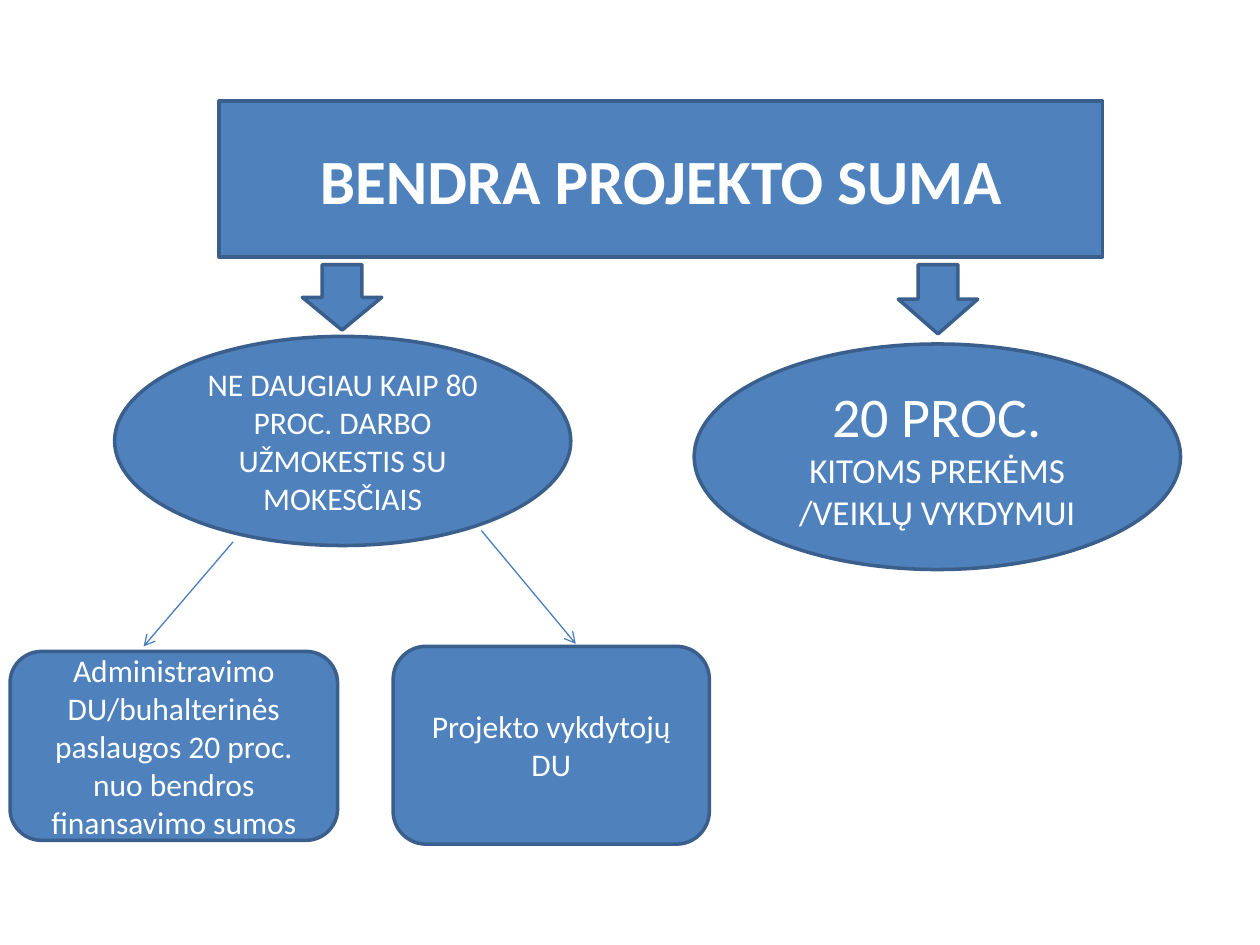
from lxml import etree
from pptx import Presentation
from pptx.dml.color import RGBColor
from pptx.enum.shapes import MSO_CONNECTOR, MSO_SHAPE
from pptx.enum.text import MSO_ANCHOR, MSO_AUTO_SIZE, PP_ALIGN
from pptx.oxml.ns import qn
from pptx.util import Inches, Pt

BLUE = RGBColor(0x4F, 0x81, 0xBD)
DARK_BLUE = RGBColor(0x3A, 0x5F, 0x8C)
ARROW_BLUE = RGBColor(0x4B, 0x7E, 0xBC)
WHITE = RGBColor(0xFF, 0xFF, 0xFF)
STRAIGHT = MSO_CONNECTOR.STRAIGHT
OVAL, ROUNDED, DOWN_ARROW = MSO_SHAPE.OVAL, MSO_SHAPE.ROUNDED_RECTANGLE, MSO_SHAPE.DOWN_ARROW
MIDDLE, CENTER, NO_AUTOFIT = MSO_ANCHOR.MIDDLE, PP_ALIGN.CENTER, MSO_AUTO_SIZE.NONE


def style_shape(shape):
    shape.fill.solid()
    shape.fill.fore_color.rgb = BLUE
    shape.line.color.rgb = DARK_BLUE
    shape.line.width = Pt(2)
    shape.shadow.inherit = False


def write_text(shape, runs, bold=False):
    frame = shape.text_frame
    frame.word_wrap = True
    frame.auto_size = NO_AUTOFIT
    frame.vertical_anchor = MIDDLE
    paragraph = frame.paragraphs[0]
    paragraph.alignment = CENTER
    paragraph.space_before = Pt(0)
    for text, size in runs:
        run = paragraph.add_run()
        run.text = text
        run.font.name = "Calibri"
        run.font.size = Pt(size)
        run.font.bold = bold
        run.font.color.rgb = WHITE


presentation = Presentation()
presentation.slide_width = Inches(10)
presentation.slide_height = Inches(7.5)
slide = presentation.slides.add_slide(presentation.slide_layouts[1])

# Title bar and the 20 percent ellipse, in the template's placeholders
title, other_costs = slide.placeholders
for placeholder, preset, (left, top, width, height) in (
    (title, "rect", (1.74, 0.8, 7.01, 1.24)),
    (other_costs, "ellipse", (5.51, 2.73, 3.86, 1.79)),
):
    placeholder.left, placeholder.top = Inches(left), Inches(top)
    placeholder.width, placeholder.height = Inches(width), Inches(height)
    geometry = etree.SubElement(placeholder.element.spPr, qn("a:prstGeom"), prst=preset)
    etree.SubElement(geometry, qn("a:avLst"))
    style_shape(placeholder)

write_text(title, [("BENDRA PROJEKTO SUMA", 36)], bold=True)
write_text(other_costs, [("20 PROC. ", 32), ("KITOMS PREKĖMS /VEIKLŲ VYKDYMUI", 20)])
properties = other_costs.text_frame.paragraphs[0]._p.get_or_add_pPr()
properties.set("marL", "0")
properties.set("indent", "0")
etree.SubElement(properties, qn("a:buNone"))

# Salary ellipse and its two parts
for preset, left, top, width, height, text in (
    (OVAL, 0.91, 2.67, 3.62, 1.66, "NE DAUGIAU KAIP 80 PROC. DARBO UŽMOKESTIS SU MOKESČIAIS"),
    (ROUNDED, 0.08, 5.17, 2.6, 1.5,
     "Administravimo DU/buhalterinės paslaugos 20 proc. nuo bendros finansavimo sumos"),
    (ROUNDED, 3.12, 5.13, 2.51, 1.57, "Projekto vykdytojų DU"),
):
    shape = slide.shapes.add_shape(preset, Inches(left), Inches(top), Inches(width), Inches(height))
    style_shape(shape)
    write_text(shape, [(text, 18)])

# Block arrows below the title bar
for left, height in ((2.4, 0.52), (7.13, 0.55)):
    arrow = slide.shapes.add_shape(DOWN_ARROW, Inches(left), Inches(2.1), Inches(0.63), Inches(height))
    style_shape(arrow)

# Thin arrows from the salary ellipse to its parts
for start_x, start_y, end_x, end_y in ((1.85, 4.3, 1.14, 5.13), (3.82, 4.21, 4.57, 5.11)):
    connector = slide.shapes.add_connector(
        STRAIGHT, Inches(start_x), Inches(start_y), Inches(end_x), Inches(end_y))
    connector.line.color.rgb = ARROW_BLUE
    connector.line.width = Pt(0.75)
    etree.SubElement(connector.line._get_or_add_ln(), qn("a:tailEnd"), type="arrow")
    etree.SubElement(connector._element.spPr, qn("a:effectLst"))

presentation.save("out.pptx")
